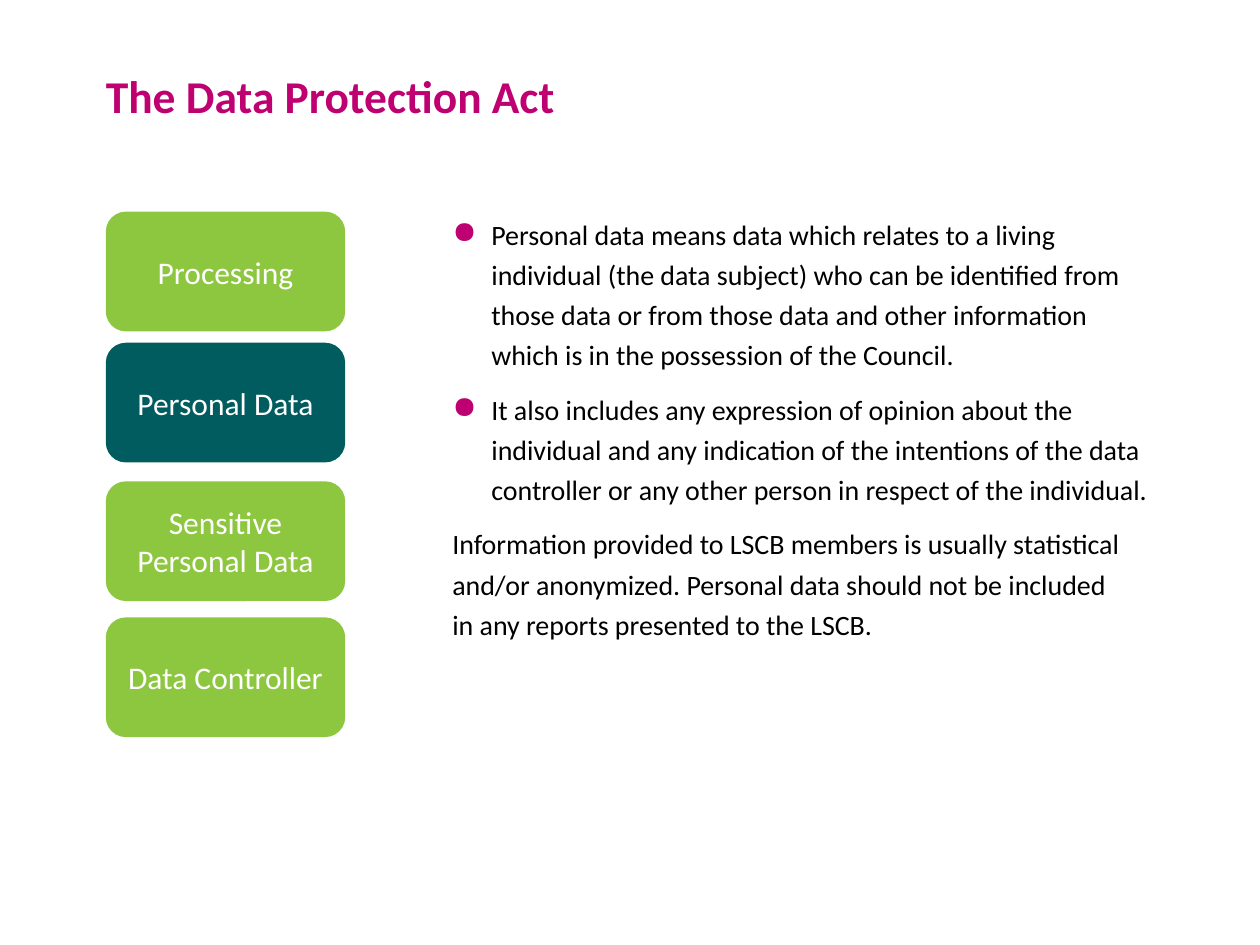
from dataclasses import dataclass

from lxml.etree import SubElement
from pptx import Presentation
from pptx.dml.color import RGBColor
from pptx.enum.shapes import MSO_SHAPE
from pptx.enum.text import MSO_ANCHOR, PP_ALIGN
from pptx.oxml.ns import qn
from pptx.slide import Slide
from pptx.util import Inches, Pt


@dataclass(frozen=True)
class Theme:
    font: str = "Calibri"
    accent: str = "BE0071"
    button: str = "8DC63F"
    active_button: str = "005C5E"
    light: str = "FFFFFF"
    dark: str = "000000"
    title_size: int = 26
    button_size: int = 18
    body_size: int = 16


@dataclass(frozen=True)
class Topic:
    label: str
    top: float
    active: bool = False


@dataclass(frozen=True)
class BodyParagraph:
    text: str
    bulleted: bool = True


THEME = Theme()

TOPICS = [
    Topic("Processing", 1.68),
    Topic("Personal Data", 2.72, active=True),
    Topic("Sensitive Personal Data", 3.82),
    Topic("Data Controller", 4.9),
]

BODY = [
    BodyParagraph(
        "Personal data means data which relates to a living individual (the data "
        "subject) who can be identified from those data or from those data and other "
        "information which is in the possession of the Council."
    ),
    BodyParagraph(
        "It also includes any expression of opinion about the individual and any "
        "indication of the intentions of the data controller or any other person in "
        "respect of the individual."
    ),
    BodyParagraph(
        "Information provided to LSCB members is usually statistical and/or "
        "anonymized. Personal data should not be included in any reports presented "
        "to the LSCB.",
        bulleted=False,
    ),
]


def apply_format(target, values: dict) -> None:
    for name, value in values.items():
        setattr(target, name, value)


def format_font(font, size: int, color: str, bold: bool = False) -> None:
    apply_format(font, {"name": THEME.font, "size": Pt(size), "bold": bold})
    font.color.rgb = RGBColor.from_string(color)


def add_text_frame(slide: Slide, left: float, top: float, width: float, height: float):
    """Add a wrapping text box without insets and return its text frame."""
    box = slide.shapes.add_textbox(Inches(left), Inches(top), Inches(width), Inches(height))
    frame = box.text_frame
    sides = ("left", "top", "right", "bottom")
    apply_format(frame, {"word_wrap": True} | {f"margin_{side}": 0 for side in sides})
    return frame


def add_bullet(paragraph) -> None:
    properties = paragraph._p.get_or_add_pPr()
    properties.set("marL", str(Inches(0.31)))
    properties.set("indent", str(-Inches(0.31)))
    color = SubElement(properties, qn("a:buClr"))
    SubElement(color, qn("a:srgbClr"), val=THEME.accent)
    SubElement(properties, qn("a:buSzPct"), val="110000")
    SubElement(properties, qn("a:buChar"), char="●")


def add_title(slide: Slide, text: str) -> None:
    paragraph = add_text_frame(slide, 0.84, 0.54, 5.34, 0.4).paragraphs[0]
    paragraph.text = text
    format_font(paragraph.font, THEME.title_size, THEME.accent, bold=True)


def add_body(slide: Slide, items: list[BodyParagraph]) -> None:
    frame = add_text_frame(slide, 3.59, 1.67, 5.54, 4.17)
    for index, item in enumerate(items):
        paragraph = frame.add_paragraph() if index else frame.paragraphs[0]
        paragraph.text = item.text
        if item.bulleted:
            add_bullet(paragraph)
        else:
            paragraph._p.get_or_add_pPr().set("marR", str(Inches(0.22)))
        paragraph.line_spacing = 1.2
        if index:
            paragraph.space_before = Pt(8)
        format_font(paragraph.font, THEME.body_size, THEME.dark)


def add_topic_button(slide: Slide, topic: Topic) -> None:
    button = slide.shapes.add_shape(
        MSO_SHAPE.ROUNDED_RECTANGLE,
        Inches(0.84), Inches(topic.top), Inches(1.9), Inches(0.95),
    )
    button.shadow.inherit = False
    button.fill.solid()
    fill = THEME.active_button if topic.active else THEME.button
    button.fill.fore_color.rgb = RGBColor.from_string(fill)
    button.line.fill.background()
    frame = button.text_frame
    apply_format(frame, {"word_wrap": True, "vertical_anchor": MSO_ANCHOR.MIDDLE})
    paragraph = frame.paragraphs[0]
    apply_format(paragraph, {"text": topic.label, "alignment": PP_ALIGN.CENTER})
    format_font(paragraph.font, THEME.button_size, THEME.light)


def main() -> None:
    presentation = Presentation()
    apply_format(presentation, {"slide_width": Inches(10), "slide_height": Inches(7.5)})
    slide = presentation.slides.add_slide(presentation.slide_layouts[6])
    add_title(slide, "The Data Protection Act")
    add_body(slide, BODY)
    for topic in TOPICS:
        add_topic_button(slide, topic)
    presentation.save("out.pptx")


if __name__ == "__main__":
    main()
